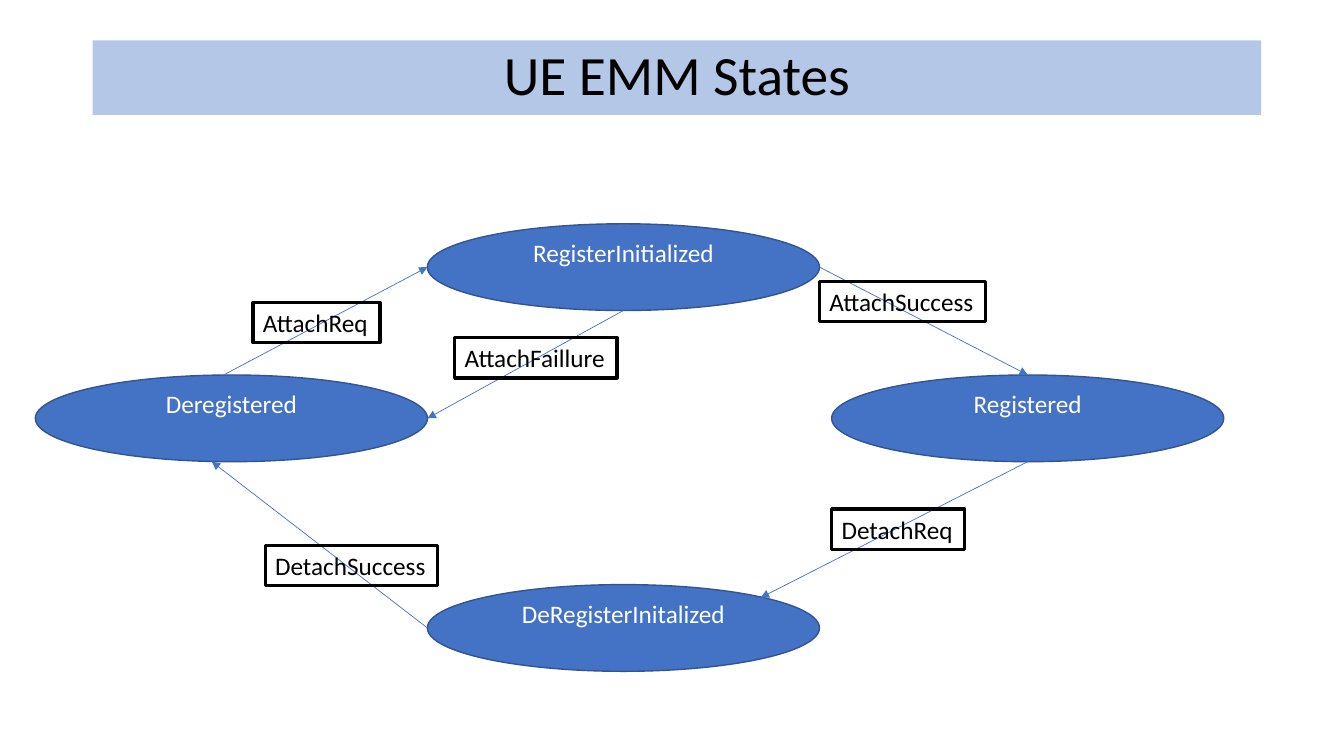
from lxml import etree
from pptx import Presentation
from pptx import util as u
from pptx.dml import color
from pptx.enum import shapes, text
from pptx.oxml import ns

COLORS = {
    "banner": "B4C7E7",
    "state": "4472C4",
    "outline": "325491",
    "dark": "000000",
    "light": "FFFFFF",
}
FONT = "Calibri"
WIDTH, HEIGHT = u.Inches(13.333), u.Inches(7.5)
COLUMN, ROW = WIDTH / 100, HEIGHT / 100
STATE_SIZE = (29.18, 11.47)
LABEL_HEIGHT = 5.33

STATES = {
    "Deregistered": (2.63, 49.6),
    "DeRegisterInitalized": (31.8, 77.33),
    "RegisterInitialized": (31.8, 29.6),
    "Registered": (61.88, 49.6),
}
TRANSITIONS = [
    ("Deregistered", (0.48, 0), "RegisterInitialized", (0, 0.5)),
    ("RegisterInitialized", (1, 0.5), "Registered", (0.5, 0)),
    ("Registered", (0.5, 1), "DeRegisterInitalized", (0.85, 0.15)),
    ("DeRegisterInitalized", (0, 0.5), "Deregistered", (0.45, 1)),
    ("RegisterInitialized", (0.5, 1), "Deregistered", (1, 0.5)),
]
LABELS = [
    ("DetachReq", 61.88, 67.33, 9.9),
    ("AttachReq", 18.83, 40, 9.45),
    ("DetachSuccess", 19.73, 72.13, 12.83),
    ("AttachSuccess", 60.98, 37.2, 12.38),
    ("AttachFaillure", 33.83, 44.67, 12.08),
]


def rgb(name):
    return color.RGBColor.from_string(COLORS[name])


def grid(column, row):
    return round(column * COLUMN), round(row * ROW)


def fill_with(shape, name):
    shape.fill.solid()
    shape.fill.fore_color.rgb = rgb(name)


def outline(shape, name, points):
    shape.line.color.rgb = rgb(name)
    shape.line.width = u.Pt(points)


def write(shape, words, size, name, alignment):
    paragraph = shape.text_frame.paragraphs[0]
    paragraph.alignment = alignment
    run = paragraph.add_run()
    run.text = words
    run.font.name = FONT
    run.font.size = u.Pt(size)
    run.font.color.rgb = rgb(name)
    return paragraph


def add_title(slide, words):
    title = slide.shapes.title
    title.left, title.top = grid(6.9, 5.33)
    title.width, title.height = grid(86.93, 9.87)
    fill_with(title, "banner")
    title.text_frame.auto_size = text.MSO_AUTO_SIZE.NONE
    title.text_frame.vertical_anchor = text.MSO_ANCHOR.MIDDLE
    paragraph = write(title, words, 39.6, "dark", text.PP_ALIGN.CENTER)
    paragraph.line_spacing = 0.9


def add_state(slide, name, position):
    ellipse = slide.shapes.add_shape(
        shapes.MSO_SHAPE.OVAL, *grid(*position), *grid(*STATE_SIZE)
    )
    ellipse.shadow.inherit = False
    fill_with(ellipse, "state")
    outline(ellipse, "outline", 1)
    ellipse.text_frame.vertical_anchor = text.MSO_ANCHOR.TOP
    ellipse.text_frame.margin_top = u.Inches(0.01)
    write(ellipse, name, 18, "light", text.PP_ALIGN.CENTER)
    return ellipse


def point_on(state, shares):
    across, down = shares
    return (
        round(state.left + across * state.width),
        round(state.top + down * state.height),
    )


def add_transition(slide, begin, end):
    arrow = slide.shapes.add_connector(
        shapes.MSO_CONNECTOR.STRAIGHT, *begin, *end
    )
    outline(arrow, "state", 0.5)
    line = arrow.line._get_or_add_ln()
    etree.SubElement(line, ns.qn("a:tailEnd"), type="triangle")
    etree.SubElement(arrow._element.spPr, ns.qn("a:effectLst"))


def add_label(slide, words, column, row, columns):
    label = slide.shapes.add_textbox(
        *grid(column, row), *grid(columns, LABEL_HEIGHT)
    )
    outline(label, "dark", 2.25)
    label.text_frame.word_wrap = False
    label.text_frame.auto_size = text.MSO_AUTO_SIZE.SHAPE_TO_FIT_TEXT
    write(label, words, 18, "dark", text.PP_ALIGN.LEFT)


def main():
    presentation = Presentation()
    presentation.slide_width, presentation.slide_height = WIDTH, HEIGHT
    slide = presentation.slides.add_slide(presentation.slide_layouts[5])
    add_title(slide, "UE EMM States")
    states = {
        name: add_state(slide, name, position)
        for name, position in STATES.items()
    }
    for source, departure, target, arrival in TRANSITIONS:
        begin = point_on(states[source], departure)
        end = point_on(states[target], arrival)
        add_transition(slide, begin, end)
    for label in LABELS:
        add_label(slide, *label)
    presentation.save("out.pptx")


if __name__ == "__main__":
    main()
